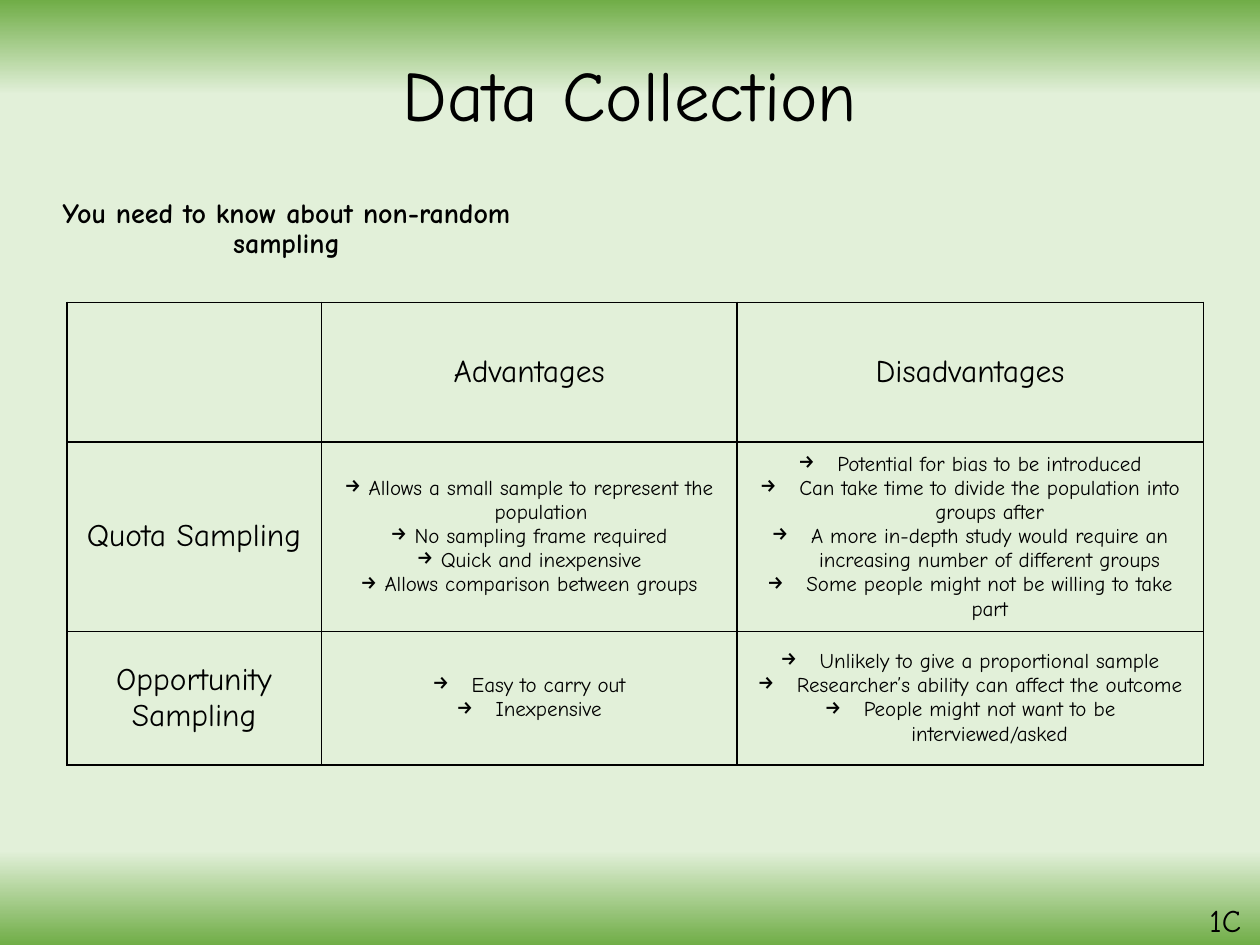
from dataclasses import dataclass

from lxml import etree
from pptx import Presentation
from pptx.dml.color import RGBColor
from pptx.enum.text import MSO_ANCHOR, MSO_AUTO_SIZE, PP_ALIGN
from pptx.oxml.ns import qn
from pptx.util import Inches, Pt

CENTER = PP_ALIGN.CENTER
LEFT = PP_ALIGN.LEFT
MIDDLE = MSO_ANCHOR.MIDDLE
FIT_SHAPE = MSO_AUTO_SIZE.SHAPE_TO_FIT_TEXT
TITLE_ONLY = 5

FONT = "Comic Neue"
BLACK = RGBColor(0x00, 0x00, 0x00)
GREEN = RGBColor(0x70, 0xAD, 0x47)
PALE_GREEN = RGBColor(0xE2, 0xF0, 0xD9)
BACKGROUND_STOPS = ((0, GREEN), (10, PALE_GREEN), (90, PALE_GREEN), (100, GREEN))

COLUMN_WIDTHS = (2.02, 3.3, 3.7)
ROW_HEIGHTS = (1.11, 1.5, 1.06)
EMU_PER_POINT = 12700


@dataclass
class CellText:
    lines: tuple[str, ...]
    size: float = 18
    indent: float = 0  # hanging indent in inches; zero means no arrow bullets


TABLE_ROWS = (
    (None, CellText(("Advantages",)), CellText(("Disadvantages",))),
    (
        CellText(("Quota Sampling",)),
        CellText((
            "Allows a small sample to represent the population",
            "No sampling frame required",
            "Quick and inexpensive",
            "Allows comparison between groups",
        ), 12, 0.19),
        CellText((
            "Potential for bias to be introduced",
            "Can take time to divide the population into groups after",
            "A more in-depth study would require an increasing number of different groups",
            "Some people might not be willing to take part",
        ), 12, 0.31),
    ),
    (
        CellText(("Opportunity Sampling",)),
        CellText(("Easy to carry out", "Inexpensive"), 12, 0.31),
        CellText((
            "Unlikely to give a proportional sample",
            "Researcher’s ability can affect the outcome",
            "People might not want to be interviewed/asked",
        ), 12, 0.31),
    ),
)


def place(shape, left: float, top: float, width: float, height: float) -> None:
    shape.left, shape.top = Inches(left), Inches(top)
    shape.width, shape.height = Inches(width), Inches(height)


def write(paragraph, text: str, size: float, bold: bool = False, align=CENTER) -> None:
    paragraph.text = text
    paragraph.alignment = align
    font = paragraph.font
    font.name, font.size, font.bold = FONT, Pt(size), bold
    font.color.rgb = BLACK


def paint_background(slide) -> None:
    fill = slide.background.fill
    fill.gradient()
    fill.gradient_angle = 90
    stop_list = slide.element.find(".//" + qn("a:gsLst"))
    for stop in list(stop_list):
        stop_list.remove(stop)
    for percent, color in BACKGROUND_STOPS:
        stop = etree.SubElement(stop_list, qn("a:gs"), pos=str(percent * 1000))
        etree.SubElement(stop, qn("a:srgbClr"), val=str(color))


def add_arrow_bullet(paragraph, indent: float) -> None:
    properties = paragraph._p.get_or_add_pPr()
    properties.set("marL", str(Inches(indent)))
    properties.set("indent", str(-Inches(indent)))
    bullet = etree.Element(qn("a:buChar"), char="→")
    # Bullets come before the default run properties
    properties.insert(len(properties) - 1, bullet)


def set_borders(cell) -> None:
    properties = cell._tc.get_or_add_tcPr()
    for index, side in enumerate(("lnL", "lnR", "lnT", "lnB")):
        line = etree.Element(qn(f"a:{side}"), w=str(EMU_PER_POINT))
        fill = etree.SubElement(line, qn("a:solidFill"))
        etree.SubElement(fill, qn("a:srgbClr"), val=str(BLACK))
        properties.insert(index, line)


def fill_cell(cell, content: CellText | None) -> None:
    cell.fill.background()
    set_borders(cell)
    cell.vertical_anchor = MIDDLE
    if content is None:
        return
    for index, line in enumerate(content.lines):
        frame = cell.text_frame
        paragraph = frame.add_paragraph() if index else frame.paragraphs[0]
        write(paragraph, line, content.size)
        if content.indent:
            add_arrow_bullet(paragraph, content.indent)


def add_sampling_table(slide) -> None:
    table = slide.shapes.add_table(
        len(ROW_HEIGHTS), len(COLUMN_WIDTHS), Inches(0.53), Inches(2.4),
        Inches(sum(COLUMN_WIDTHS)), Inches(sum(ROW_HEIGHTS)),
    ).table
    table.first_row = table.horz_banding = False
    for column, width in zip(table.columns, COLUMN_WIDTHS):
        column.width = Inches(width)
    for row, height, contents in zip(table.rows, ROW_HEIGHTS, TABLE_ROWS):
        row.height = Inches(height)
        for cell, content in zip(row.cells, contents):
            fill_cell(cell, content)


def add_text(slide, text: str, box: tuple[float, ...], size: float,
             bold: bool = False, align=CENTER, wrap: bool = True):
    shape = slide.shapes.add_textbox(*(Inches(value) for value in box))
    shape.text_frame.word_wrap = wrap
    write(shape.text_frame.paragraphs[0], text, size, bold, align)
    return shape


def main() -> None:
    presentation = Presentation()
    presentation.slide_width, presentation.slide_height = Inches(10), Inches(7.5)
    slide = presentation.slides.add_slide(presentation.slide_layouts[TITLE_ONLY])
    paint_background(slide)

    # Title
    title = slide.shapes.title
    place(title, 0.69, 0.24, 8.62, 1.09)
    title.text_frame.vertical_anchor = MIDDLE
    write(title.text_frame.paragraphs[0], "Data Collection", 40.5)
    title.text_frame.paragraphs[0].line_spacing = 0.9

    # Introduction and topic code
    introduction = add_text(slide, "You need to know about non-random sampling",
                            (0.16, 1.53, 4.23, 5.22), 16, bold=True)
    introduction.text_frame.paragraphs[0].line_spacing = 0.9
    code = add_text(slide, "1C", (9.5, 7.1, 0.47, 0.4), 18, align=LEFT, wrap=False)
    code.text_frame.auto_size = FIT_SHAPE

    # Comparison of sampling methods
    add_sampling_table(slide)
    presentation.save("out.pptx")


if __name__ == "__main__":
    main()
